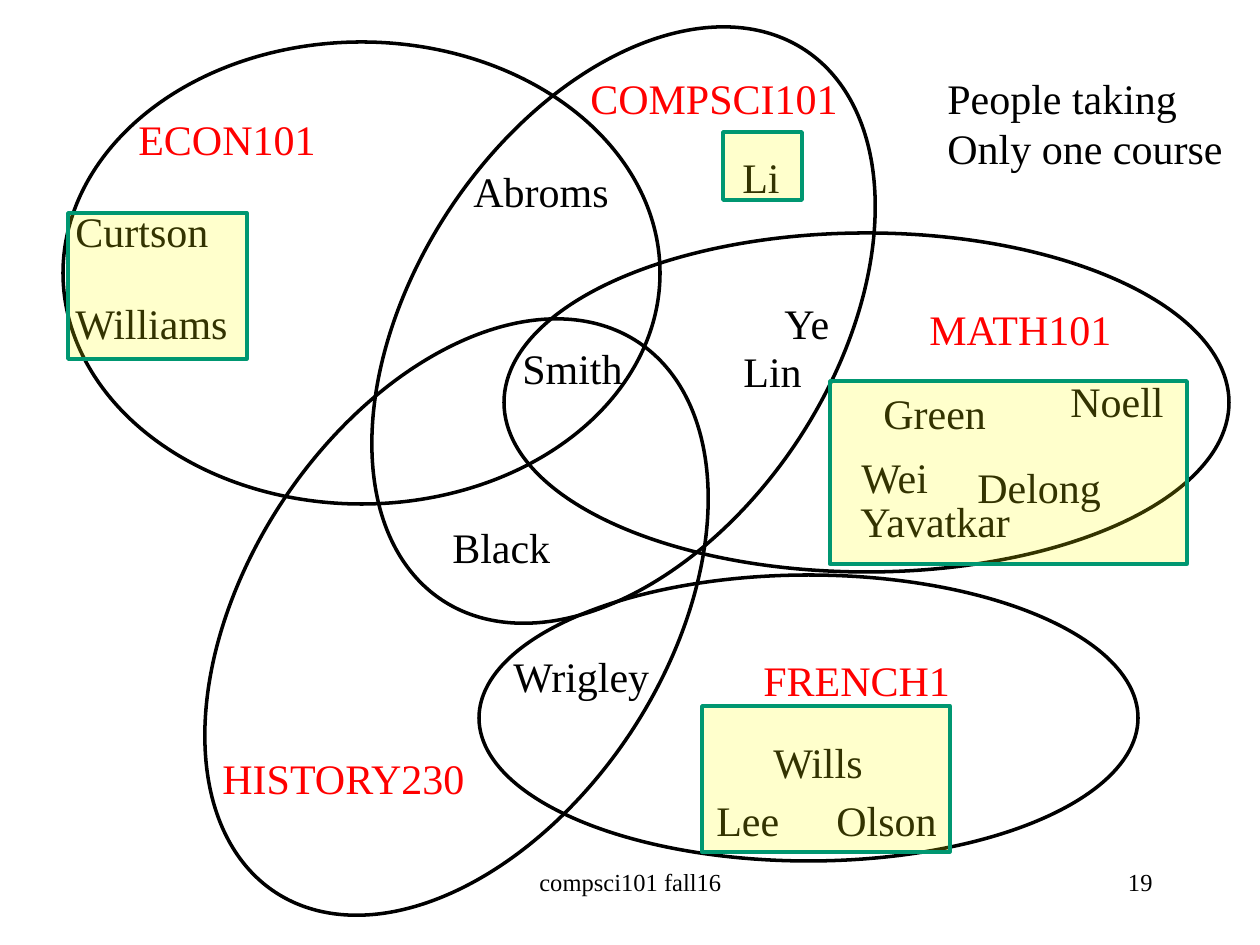
from pptx import Presentation
from pptx.dml.color import RGBColor
from pptx.enum.shapes import MSO_SHAPE
from pptx.enum.text import MSO_AUTO_SIZE, PP_ALIGN
from pptx.oxml.ns import qn
from pptx.util import Emu, Pt
from lxml.etree import SubElement

PX = 914400 / 126
COLORS = {"ink": "000000", "course": "FF0000", "mark": "FFFF00", "edge": "009771"}

prs = Presentation()
prs.slide_width, prs.slide_height = Emu(9144000), Emu(6858000)
s = prs.slides.add_slide(prs.slide_layouts[6])


def add_text(text, x, y, w, h=63, size=24, color="ink", align=PP_ALIGN.LEFT, wrap=False):
    tb = s.shapes.add_textbox(*(Emu(round(v * PX)) for v in (x, y, w, h)))
    tf = tb.text_frame
    tf.word_wrap = wrap
    tf.auto_size = MSO_AUTO_SIZE.NONE if wrap else MSO_AUTO_SIZE.SHAPE_TO_FIT_TEXT
    tf.text = text
    for p in tf.paragraphs:
        p.alignment = align
        font = p.runs[0].font
        font.name, font.size = "Times New Roman", Pt(size)
        font.color.rgb = RGBColor.from_string(COLORS[color])


def add_outline(kind, box, line, fill=None, rotation=0):
    """Draw a 2 pt outlined shape; a fill is 20% opaque."""
    sp = s.shapes.add_shape(kind, *(Emu(round(v * PX)) for v in box))
    sp.shadow.inherit = False
    sp.rotation = rotation
    sp.line.width = Pt(2)
    sp.line.color.rgb = RGBColor.from_string(COLORS[line])
    if fill:
        sp.fill.solid()
        sp.fill.fore_color.rgb = RGBColor.from_string(COLORS[fill])
        rgb = sp.fill._xPr.find(qn("a:solidFill"))[0]
        SubElement(rgb, qn("a:alpha")).set("val", "20000")
    else:
        sp.fill.background()


# Course sets
for box, tilt in [
    ((127, 408, 659, 418), 123.4),  # HISTORY230
    ((479, 575, 659, 286), 0),      # FRENCH1
    ((63, 42, 597, 462), 0),        # ECON101
    ((294, 116, 659, 418), 123.4),  # COMPSCI101
    ((504, 233, 725, 339), 0),      # MATH101
]:
    add_outline(MSO_SHAPE.OVAL, box, "ink", rotation=tilt)

for course, x, y, w in [
    ("COMPSCI101", 578, 66, 276),
    ("MATH101", 917, 297, 209),
    ("ECON101", 126, 107, 204),
    ("HISTORY230", 210, 746, 270),
    ("FRENCH1", 751, 648, 214),
]:
    add_text(course, x, y, w, color="course")

for student, x, y, w in [
    ("Smith", 510, 336, 126),
    ("Green", 871, 381, 129),
    ("Ye", 772, 291, 71),
    ("Li", 730, 145, 63),
    ("Black", 440, 515, 125),
    ("Lee", 704, 788, 89),
    ("Olson", 824, 788, 127),
    ("Wills", 761, 730, 116),
    ("Wrigley", 501, 644, 163),
    ("Abroms", 461, 159, 163),
    ("Williams", 63, 291, 179),
    ("Curtson", 63, 199, 160),
    ("Lin", 731, 339, 84),
    ("Wei", 849, 445, 92),
    ("Yavatkar", 848, 489, 176),
    ("Delong", 965, 455, 150),
    ("Noell", 1058, 369, 120),
]:
    add_text(student, x, y, w)

add_text("People taking\nOnly one course", 935, 66, 304, 115)

# Students in exactly one course
for box in [
    (830, 381, 357, 183),
    (68, 213, 179, 146),
    (702, 706, 248, 146),
    (723, 132, 79, 68),
]:
    add_outline(MSO_SHAPE.RECTANGLE, box, "edge", fill="mark")

add_text("compsci101 fall16", 431, 861, 399, size=14, align=PP_ALIGN.CENTER, wrap=True)
add_text("19", 903, 861, 262, size=14, align=PP_ALIGN.RIGHT, wrap=True)

prs.save("out.pptx")
